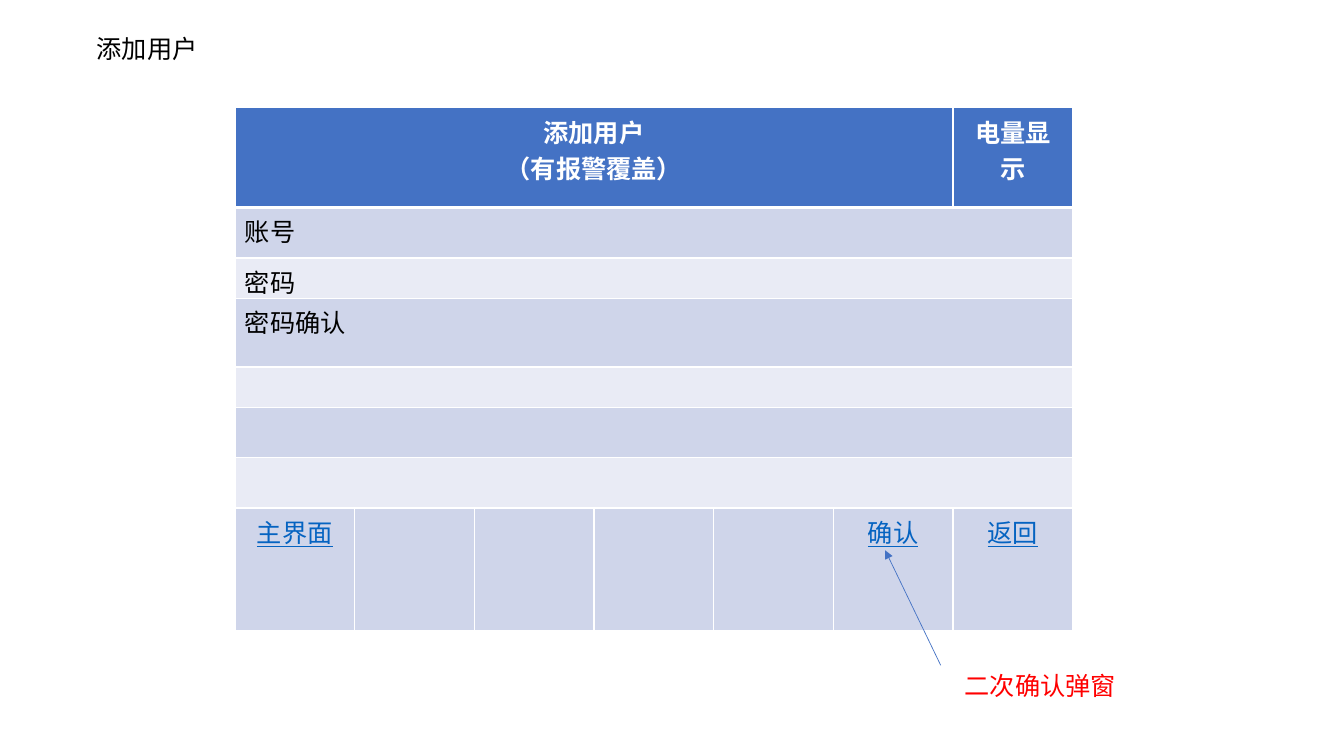
import pptx
import pptx.util
import pptx.dml.color
import pptx.enum.shapes
import pptx.enum.text
import pptx.oxml.ns
import lxml.etree

FONT = "Noto Sans CJK SC"
COLORS = {"black": "000000", "white": "FFFFFF", "red": "FF0000", "link": "0563C1",
          "header": "4472C4", "dark band": "CFD5EA", "light band": "E9EBF5"}

LABELS = [  # text, left, top, width, height, colour
    ("添加用户", 0.86, 0.28, 1.21, 0.4, "black"),
    ("二次确认弹窗", 9.47, 6.6, 1.72, 0.4, "red"),
]
HEADER = {0: "添加用户\n（有报警覆盖）", 6: "电量显示"}
FIELDS = ["账号", "密码", "密码确认", "", "", ""]
BUTTONS = {0: "主界面", 5: "确认", 6: "返回"}

TABLE_LEFT, TABLE_TOP, TABLE_WIDTH = 2.33, 1.07, 8.31
ROW_HEIGHTS = [0.99, 0.5, 0.4, 0.68, 0.4, 0.5, 0.5, 1.22]
COLUMNS = 7
LAST_ROW = len(ROW_HEIGHTS) - 1
ARROW = (9.33, 6.6, 8.78, 5.46)

inches = pptx.util.Inches
qn = pptx.oxml.ns.qn


def rgb(name):
    return pptx.dml.color.RGBColor.from_string(COLORS[name])


def write(frame, text, color, centred=False, bold=False, underline=False):
    frame.text = text
    for para in frame.paragraphs:
        if centred:
            para.alignment = pptx.enum.text.PP_ALIGN.CENTER
        for span in para.runs:
            font = span.font
            font.size = pptx.util.Pt(18)
            font.bold = bold
            font.underline = underline
            font.color.rgb = rgb(color)
            font.name = FONT
            latin = font._element.find(qn("a:latin"))
            latin.addnext(latin.makeelement(qn("a:ea"), {"typeface": FONT}))


def add_borders(cell, top, bottom):
    """Give all four sides a white line, with top and bottom widths in points."""
    properties = cell._tc.get_or_add_tcPr()
    widths = {"lnL": 1, "lnR": 1, "lnT": top, "lnB": bottom}
    for index, (side, width) in enumerate(widths.items()):
        line = properties.makeelement(qn("a:" + side), {"w": str(pptx.util.Pt(width))})
        fill = lxml.etree.SubElement(line, qn("a:solidFill"))
        lxml.etree.SubElement(fill, qn("a:srgbClr"), val=COLORS["white"])
        properties.insert(index, line)


def add_label(page, text, left, top, width, height, color):
    box = page.shapes.add_textbox(*map(inches, (left, top, width, height)))
    frame = box.text_frame
    frame.word_wrap = False
    frame.auto_size = pptx.enum.text.MSO_AUTO_SIZE.SHAPE_TO_FIT_TEXT
    write(frame, text, color)


def add_form(page):
    table = page.shapes.add_table(
        len(ROW_HEIGHTS), COLUMNS, inches(TABLE_LEFT), inches(TABLE_TOP),
        inches(TABLE_WIDTH), inches(sum(ROW_HEIGHTS))).table
    table.first_row = table.horz_banding = False
    for column in table.columns:
        column.width = inches(TABLE_WIDTH / COLUMNS)
    for row, height in enumerate(ROW_HEIGHTS):
        table.rows[row].height = inches(height)
        band = "header" if row == 0 else "dark band" if row % 2 else "light band"
        for column in range(COLUMNS):
            cell = table.cell(row, column)
            cell.fill.solid()
            cell.fill.fore_color.rgb = rgb(band)
            add_borders(cell, 3 if row == 1 else 1, 3 if row == 0 else 1)

    table.cell(0, 0).merge(table.cell(0, COLUMNS - 2))
    for column, text in HEADER.items():
        write(table.cell(0, column).text_frame, text, "white", centred=True, bold=True)
    for row, text in enumerate(FIELDS, start=1):
        table.cell(row, 0).merge(table.cell(row, COLUMNS - 1))
        write(table.cell(row, 0).text_frame, text, "black")
    for column, text in BUTTONS.items():
        write(table.cell(LAST_ROW, column).text_frame, text, "link",
              centred=True, underline=True)


def add_arrow(page):
    arrow = page.shapes.add_connector(
        pptx.enum.shapes.MSO_CONNECTOR.STRAIGHT, *map(inches, ARROW))
    arrow.line.color.rgb = rgb("header")
    arrow.line.width = pptx.util.Pt(0.5)
    lxml.etree.SubElement(arrow.line._get_or_add_ln(), qn("a:tailEnd"), type="triangle")
    lxml.etree.SubElement(arrow._element.spPr, qn("a:effectLst"))


def main():
    deck = pptx.Presentation()
    deck.slide_width, deck.slide_height = inches(13.33), inches(7.5)
    page = deck.slides.add_slide(deck.slide_layouts[6])
    title, note = LABELS
    add_label(page, *title)
    add_form(page)
    add_arrow(page)
    add_label(page, *note)
    deck.save("out.pptx")


if __name__ == "__main__":
    main()
